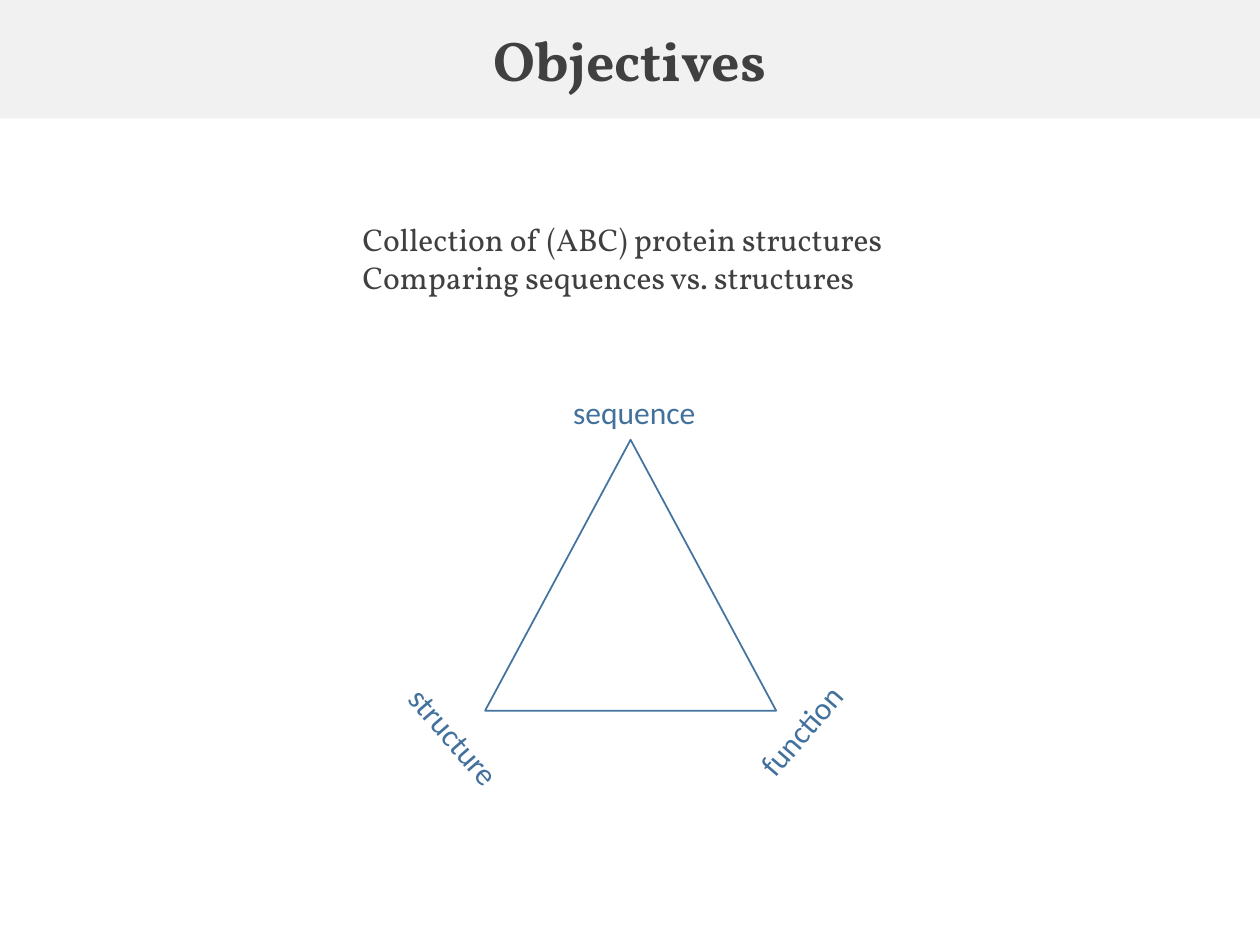
from pptx import Presentation
from pptx.dml.color import RGBColor
from pptx.enum import shapes, text
from pptx.util import Inches, Pt

GREY, BLUE = "404040", "41719C"


def colour(value):
    return RGBColor.from_string(value)


def write(box, lines, font, size, shade, bold=False):
    frame = box.text_frame
    frame.word_wrap = False
    for index, line in enumerate(lines):
        para = frame.paragraphs[0] if index == 0 else frame.add_paragraph()
        span = para.add_run()
        span.text = line
        span.font.name = font
        span.font.size = Pt(size)
        span.font.bold = bold
        span.font.color.rgb = colour(shade)
    return frame


deck = Presentation()
deck.slide_width, deck.slide_height = Inches(10), Inches(7.5)
page = deck.slides.add_slide(deck.slide_layouts[5])

# Title band
title = page.shapes.title
title.left, title.top = Inches(0), Inches(0)
title.width, title.height = Inches(10), Inches(0.94)
title.fill.solid()
title.fill.fore_color.rgb = colour("F1F1F1")
frame = write(title, ["Objectives"], "Vollkorn", 32, GREY, bold=True)
frame.auto_size = text.MSO_AUTO_SIZE.NONE
frame.vertical_anchor = text.MSO_ANCHOR.MIDDLE
frame.paragraphs[0].alignment = text.PP_ALIGN.CENTER

# Objectives
goals = page.shapes.add_textbox(Inches(2.78), Inches(1.7), Inches(4.45), Inches(0.71))
frame = write(goals, ["Collection of (ABC) protein structures",
                      "Comparing sequences vs. structures"], "Vollkorn", 18, GREY)
frame.auto_size = text.MSO_AUTO_SIZE.SHAPE_TO_FIT_TEXT

# Triangle
triangle = page.shapes.add_shape(shapes.MSO_SHAPE.ISOSCELES_TRIANGLE, Inches(3.85),
                                 Inches(3.49), Inches(2.31), Inches(2.15))
triangle.shadow.inherit = False
triangle.fill.background()
triangle.line.color.rgb = colour("43739E")
triangle.line.width = Pt(1)

# Corner labels: word, left, top, width, rotation
for word, left, top, width, angle in [("sequence", 4.45, 3.07, 1.19, 0),
                                      ("structure", 3.04, 5.65, 1.14, 49.2),
                                      ("function", 5.83, 5.59, 1.06, 310.8)]:
    label = page.shapes.add_textbox(Inches(left), Inches(top), Inches(width), Inches(0.4))
    label.rotation = angle
    frame = write(label, [word], "Calibri", 18, BLUE)
    frame.auto_size = text.MSO_AUTO_SIZE.SHAPE_TO_FIT_TEXT

deck.save("out.pptx")
